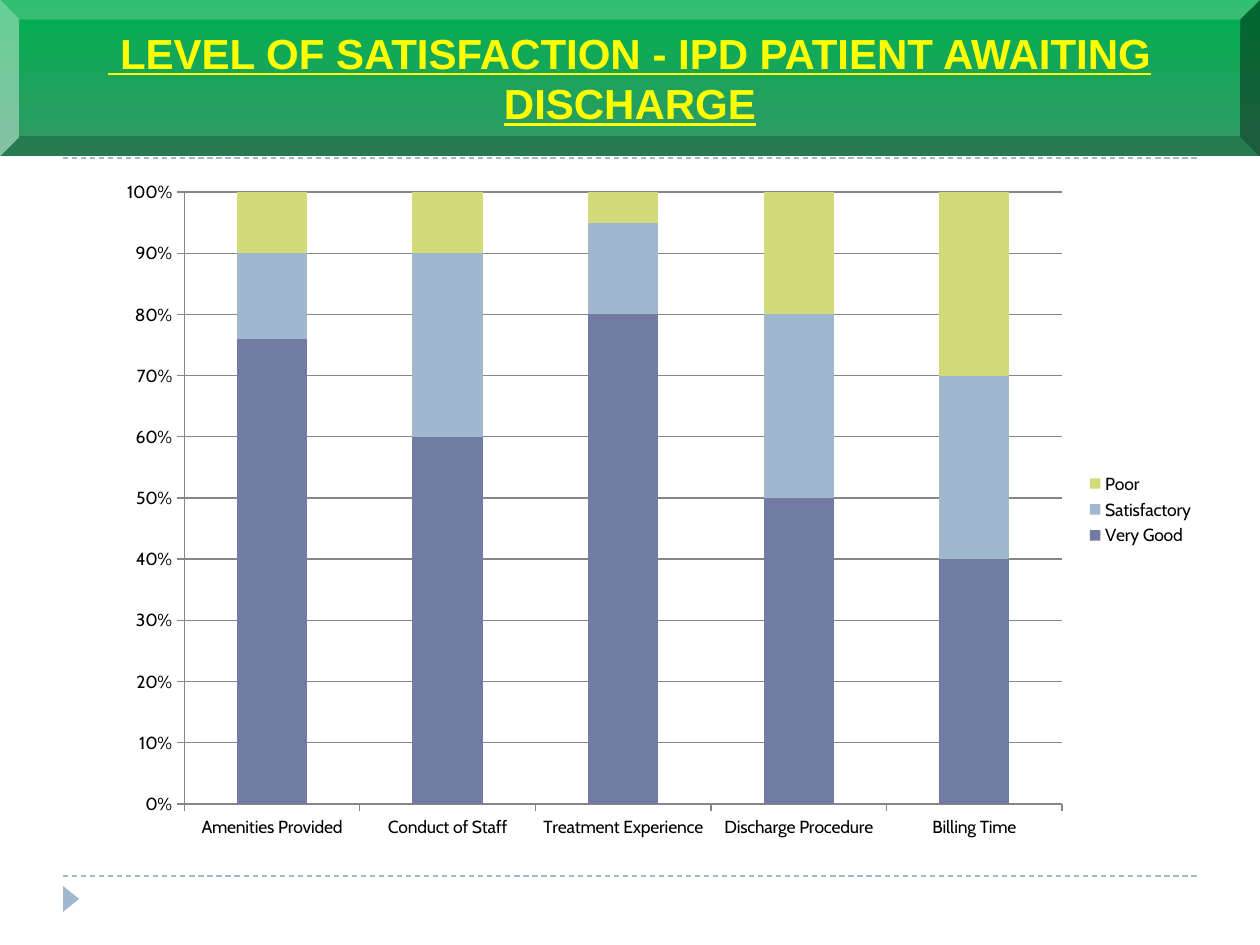
from lxml import etree
from pptx import Presentation
from pptx import util as u
from pptx.chart.data import CategoryChartData
from pptx.dml.color import RGBColor
from pptx.enum import chart as charts, dml, shapes, text
from pptx.oxml.ns import qn

PX = 914400 // 126
WIDTH, HEIGHT = 1260, 945
TITLE = " LEVEL OF SATISFACTION - IPD PATIENT AWAITING DISCHARGE"
TITLE_BOX = (0, 0, WIDTH, 156)
GRADIENT = ["00B050", "339966"]
RULE_LEFT, RULE_RIGHT = 63, 1197
RULE_TOPS = [876, 158]
MARKER_BOX = (58, 891, 26, 16)
CHART_BOX = (105, 168, 1102, 683)
ACCENT, GRID = "9FB8CD", "868686"
CATEGORIES = ["Amenities Provided", "Conduct of Staff", "Treatment Experience",
              "Discharge Procedure", "Billing Time"]
SERIES = [
    ("Very Good", "727CA3", [76, 60, 80, 50, 40]),
    ("Satisfactory", ACCENT, [14, 30, 15, 30, 30]),
    ("Poor", "D2DA7A", [10, 10, 5, 20, 30]),
]


def px(*values):
    return [u.Emu(value * PX) for value in values]


def color(value):
    return RGBColor.from_string(value)


def solid(fill, value):
    fill.solid()
    fill.fore_color.rgb = color(value)


def add_rule(slide, top):
    rule = slide.shapes.add_connector(
        shapes.MSO_CONNECTOR.STRAIGHT, *px(RULE_LEFT, top, RULE_RIGHT, top))
    rule.line.color.rgb = color(ACCENT)
    rule.line.width = u.Pt(0.75)
    rule.line.dash_style = dml.MSO_LINE.DASH
    etree.SubElement(rule._element.spPr, qn("a:effectLst"))


def add_preset(slide, kind, box):
    shape = slide.shapes.add_shape(kind, *px(*box))
    shape.shadow.inherit = False
    shape.line.fill.background()
    return shape


def add_marker(slide):
    marker = add_preset(slide, shapes.MSO_SHAPE.ISOSCELES_TRIANGLE, MARKER_BOX)
    marker.rotation = 90
    solid(marker.fill, ACCENT)


def add_satisfaction_chart(slide):
    data = CategoryChartData()
    data.categories = CATEGORIES
    for name, _, values in SERIES:
        data.add_series(name, values)
    chart = slide.shapes.add_chart(
        charts.XL_CHART_TYPE.COLUMN_STACKED_100, *px(*CHART_BOX), data).chart
    chart.has_title = False
    chart.font.name = "Cabin"
    chart.font.size = u.Pt(10)
    chart.font.color.rgb = color("000000")
    chart.has_legend = True
    chart.legend.position = charts.XL_LEGEND_POSITION.RIGHT
    chart.legend.include_in_layout = False

    plot = chart.plots[0]
    plot.overlap, plot.gap_width, plot.vary_by_categories = 100, 150, False
    for series, (_, fill, _) in zip(plot.series, SERIES):
        solid(series.format.fill, fill)

    value_axis = chart.value_axis
    value_axis.minimum_scale, value_axis.maximum_scale = 0, 1
    value_axis.major_unit = 0.1
    value_axis.has_major_gridlines = True
    value_axis.tick_labels.number_format = "0%"
    value_axis.tick_labels.number_format_is_linked = False
    for axis in (chart.category_axis, value_axis):
        axis.major_tick_mark = charts.XL_TICK_MARK.OUTSIDE
        axis.format.line.color.rgb = color(GRID)
    value_axis.major_gridlines.format.line.color.rgb = color(GRID)


def add_title(slide):
    banner = add_preset(slide, shapes.MSO_SHAPE.BEVEL, TITLE_BOX)
    banner.adjustments[0] = 0.125
    banner.fill.gradient()
    banner.fill.gradient_angle = 270
    for position, (stop, value) in enumerate(zip(banner.fill.gradient_stops, GRADIENT)):
        stop.position = position
        stop.color.rgb = color(value)
    frame = banner.text_frame
    frame.word_wrap = True
    frame.vertical_anchor = text.MSO_ANCHOR.MIDDLE
    frame.margin_left, frame.margin_right = px(16, 16)
    frame.margin_top, frame.margin_bottom = px(8, 8)
    paragraph = frame.paragraphs[0]
    paragraph.text = TITLE
    paragraph.alignment = text.PP_ALIGN.CENTER
    font = paragraph.font
    font.name, font.size = "Arial", u.Pt(24)
    font.bold = font.underline = True
    font.color.rgb = color("FFFF00")


def main():
    """Build the patient satisfaction slide."""
    presentation = Presentation()
    presentation.slide_width, presentation.slide_height = px(WIDTH, HEIGHT)
    slide = presentation.slides.add_slide(presentation.slide_layouts[6])
    for top in RULE_TOPS:
        add_rule(slide, top)
    add_marker(slide)
    add_satisfaction_chart(slide)
    add_title(slide)
    presentation.save("out.pptx")


if __name__ == "__main__":
    main()
